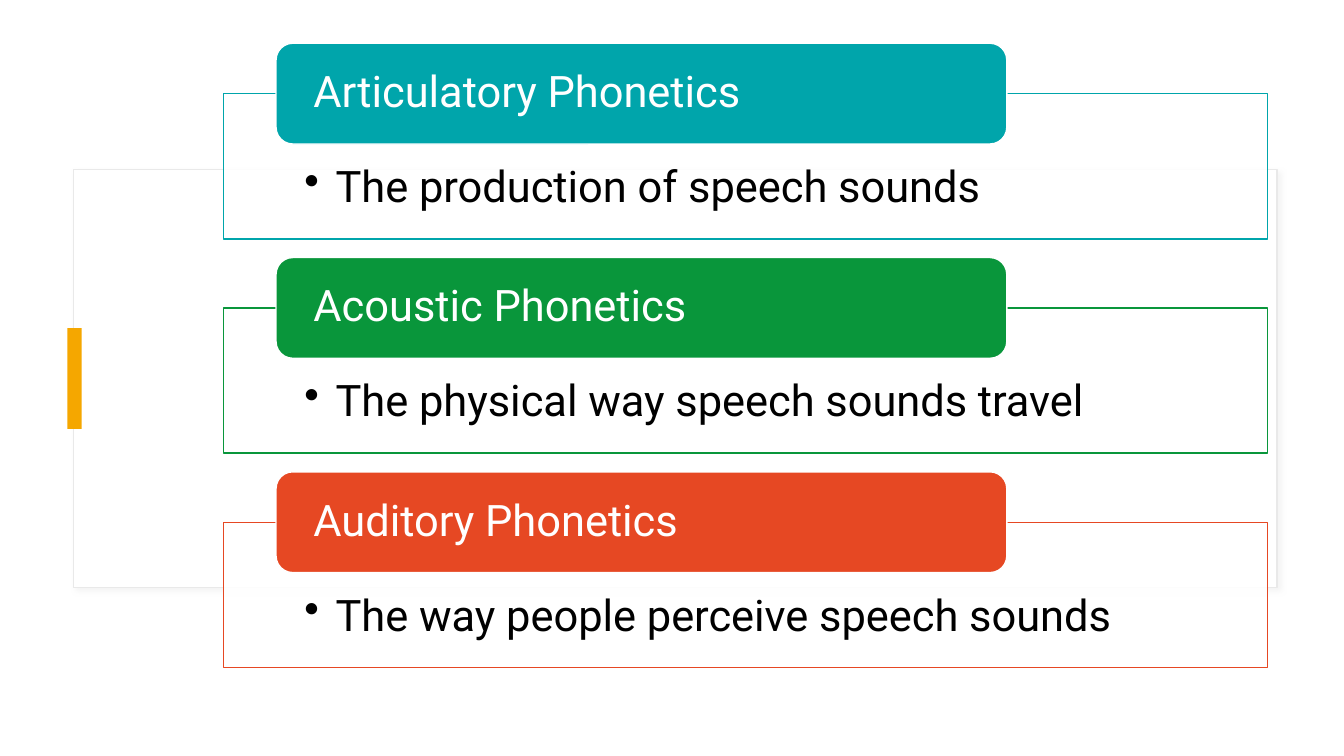
from lxml.etree import SubElement
from pptx import Presentation
from pptx.dml.color import RGBColor
from pptx.enum.shapes import MSO_SHAPE as Shape
from pptx.enum.text import MSO_ANCHOR as Anchor, PP_ALIGN as Align
from pptx.oxml.ns import qn
from pptx.util import Cm, Pt

COLORS = {
    "white": "FFFFFF",
    "black": "000000",
    "frame": "E9E9E9",
    "shadow": "D9D9D9",
    "accent": "F5A700",
    "teal": "00A5AB",
    "green": "09963B",
    "red": "E64823",
}
FONT = "Roboto"
SECTIONS = [
    ("Articulatory Phonetics", "The production of speech sounds", "teal"),
    ("Acoustic Phonetics", "The physical way speech sounds travel", "green"),
    ("Auditory Phonetics", "The way people perceive speech sounds", "red"),
]
SECTION_PITCH = 5.4


def rgb(name):
    return RGBColor.from_string(COLORS[name])


def add_box(slide, kind, box, fill, line=None):
    """Add a flat shape; box is left, top, width, height in centimetres."""
    shape = slide.shapes.add_shape(kind, *(Cm(length) for length in box))
    shape.shadow.inherit = False
    shape.fill.solid()
    shape.fill.fore_color.rgb = rgb(fill)
    if line:
        shape.line.color.rgb = rgb(line)
        shape.line.width = Pt(1)
    else:
        shape.line.fill.background()
    return shape


def write_text(shape, text, color, insets, anchor):
    """Fill the shape with one left-aligned paragraph and return it."""
    frame = shape.text_frame
    frame.word_wrap = True
    frame.vertical_anchor = anchor
    (frame.margin_left, frame.margin_top,
     frame.margin_right, frame.margin_bottom) = (Cm(inset) for inset in insets)
    paragraph = frame.paragraphs[0]
    paragraph.text = text
    paragraph.alignment = Align.LEFT
    paragraph.line_spacing = 0.9
    paragraph.font.name = FONT
    paragraph.font.size = Pt(31)
    paragraph.font.color.rgb = rgb(color)
    return paragraph


def add_bullet(paragraph, indent):
    paragraph.level = 1
    properties = paragraph._p.get_or_add_pPr()
    properties.set("marL", str(Cm(indent)))
    properties.set("indent", str(-Cm(indent)))
    SubElement(properties, qn("a:buChar"), char="•")


def set_opacity(shape, percent):
    color = shape.element.spPr.find(qn("a:solidFill")).find(qn("a:srgbClr"))
    SubElement(color, qn("a:alpha"), val=str(percent * 1000))


def add_soft_shadow(shape):
    effects = shape.element.spPr.find(qn("a:effectLst"))
    shadow = SubElement(effects, qn("a:outerShdw"), blurRad=str(Pt(4)),
                        dist=str(Pt(3)), dir=str(45 * 60000),
                        algn="tl", rotWithShape="0")
    color = SubElement(shadow, qn("a:srgbClr"), val=COLORS["shadow"])
    SubElement(color, qn("a:alpha"), val="30000")


def add_backdrop(slide, left, top, width, height):
    """Place the framed panel with an accent bar centred on its left edge."""
    panel = add_box(slide, Shape.RECTANGLE, (left, top, width, height),
                    "white", "frame")
    add_soft_shadow(panel)
    bar_width, bar_height = 0.36, 2.54
    bar_top = top + (height - bar_height) / 2
    add_box(slide, Shape.RECTANGLE,
            (left - 0.15, bar_top, bar_width, bar_height), "accent")


def add_section(slide, left, top, width, height, title, detail, color):
    """Place an outlined detail box with a title tab astride its top edge."""
    tab_height = 2.54
    body_top = top + tab_height / 2
    body = add_box(slide, Shape.RECTANGLE,
                   (left, body_top, width, height - tab_height / 2),
                   "white", color)
    set_opacity(body, 90)
    paragraph = write_text(body, detail, "black", (2.03, 1.8, 2.03, 0.61),
                           Anchor.TOP)
    add_bullet(paragraph, 0.79)

    tab = add_box(slide, Shape.ROUNDED_RECTANGLE,
                  (left + width * 0.05, top, width * 0.7, tab_height),
                  color, "white")
    write_text(tab, title, "white", (0.82, 0, 0.82, 0), Anchor.MIDDLE)


def main():
    presentation = Presentation()
    presentation.slide_width = Cm(33.87)
    presentation.slide_height = Cm(19.05)
    slide = presentation.slides.add_slide(presentation.slide_layouts[6])
    add_backdrop(slide, 1.85, 4.27, 30.33, 10.54)
    for index, section in enumerate(SECTIONS):
        add_section(slide, 5.64, 1.09 + index * SECTION_PITCH, 26.31, 4.93,
                    *section)
    presentation.save("out.pptx")


if __name__ == "__main__":
    main()
